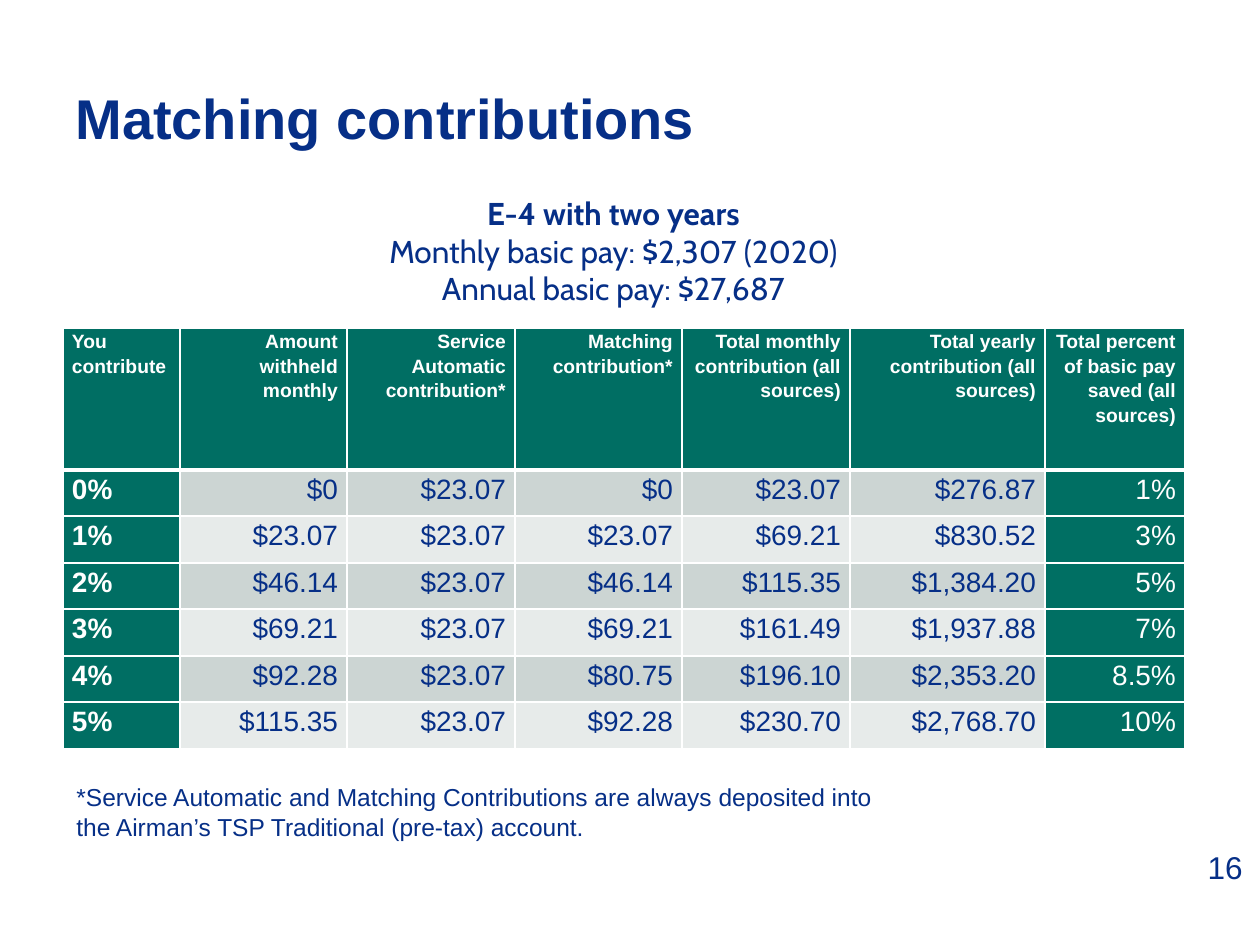
import pptx
import pptx.util
import pptx.dml.color
import pptx.enum.text
from lxml import etree

PX = 914400 / 126
NAVY, GREEN, WHITE = "062F87", "006E63", "FFFFFF"
PERCENT_GREEN = "006F63"
BANDS = ["CCD5D3", "E7EBEA"]
LEFT, CENTER, RIGHT = (pptx.enum.text.PP_ALIGN.LEFT, pptx.enum.text.PP_ALIGN.CENTER,
                       pptx.enum.text.PP_ALIGN.RIGHT)
TOP, MIDDLE = pptx.enum.text.MSO_ANCHOR.TOP, pptx.enum.text.MSO_ANCHOR.MIDDLE
A = "http://schemas.openxmlformats.org/drawingml/2006/main"


def px(*lengths):
    """Turn pixels into EMU."""
    return [pptx.util.Emu(round(n * PX)) for n in lengths]


def style(p, size, color, bold=False, align=LEFT, name="Arial"):
    p.alignment = align
    p.font.name = name
    p.font.size = pptx.util.Pt(size)
    p.font.bold = bold
    p.font.color.rgb = pptx.dml.color.RGBColor.from_string(color)


prs = pptx.Presentation()
prs.slide_width, prs.slide_height = px(1260, 945)
s = prs.slides.add_slide(prs.slide_layouts[6])

# Text boxes: place, lines with bold flag, size, alignment, anchor, font, wrap
texts = [
    ((961, 842, 294, 50), [("16", False)], 18, RIGHT, TOP, "Arial", True),
    ((63, 38, 1134, 158), [("Matching contributions", True)], 32, LEFT, MIDDLE, "Arial", True),
    ((373, 187, 481, 127),
     [("E-4 with two years", True), ("Monthly basic pay: $2,307 (2020)", False),
      ("Annual basic pay: $27,687", False)], 18, CENTER, MIDDLE, "Cabin", False),
    ((64, 776, 859, 72),
     [("*Service Automatic and Matching Contributions are always deposited into "
       "the Airman’s TSP Traditional (pre-tax) account.", False)], 14, LEFT, TOP, "Arial", True),
]
for place, lines, size, align, anchor, name, wrap in texts:
    tf = s.shapes.add_textbox(*px(*place)).text_frame
    tf.word_wrap = wrap
    tf.vertical_anchor = anchor
    tf.text = "\n".join(line for line, _ in lines)
    for p, (_, bold) in zip(tf.paragraphs, lines):
        style(p, size, NAVY, bold, align, name)

# Contribution table
rows = [
    ["You\vcontribute", "Amount withheld monthly", "Service Automatic contribution*",
     "Matching contribution*", "Total monthly contribution (all sources)",
     "Total yearly contribution (all sources)", "Total percent of basic pay saved (all sources)"],
    ["0%", "$0", "$23.07", "$0", "$23.07", "$276.87", "1%"],
    ["1%", "$23.07", "$23.07", "$23.07", "$69.21", "$830.52", "3%"],
    ["2%", "$46.14", "$23.07", "$46.14", "$115.35", "$1,384.20", "5%"],
    ["3%", "$69.21", "$23.07", "$69.21", "$161.49", "$1,937.88", "7%"],
    ["4%", "$92.28", "$23.07", "$80.75", "$196.10", "$2,353.20", "8.5%"],
    ["5%", "$115.35", "$23.07", "$92.28", "$230.70", "$2,768.70", "10%"],
]
widths = [117, 167, 168, 167, 168, 195, 140]
heights = [142] + [46, 47] * 3
last = len(widths) - 1
table = s.shapes.add_table(len(rows), len(widths),
                           *px(63, 328, sum(widths), sum(heights))).table
for column, width in zip(table.columns, px(*widths)):
    column.width = width
for row, height in zip(table.rows, px(*heights)):
    row.height = height

for i, row in enumerate(rows):
    for j, text in enumerate(row):
        cell = table.cell(i, j)
        header = i == 0
        if header or j == 0:
            fill, color = GREEN, WHITE
        elif j == last:
            fill, color = PERCENT_GREEN, WHITE
        else:
            fill, color = BANDS[(i - 1) % 2], NAVY

        cell.margin_left, cell.margin_right, cell.margin_top, cell.margin_bottom = px(9, 9, 0, 0)
        cell.text = text
        p = cell.text_frame.paragraphs[0]
        p.line_spacing = 1.15
        p.space_after = pptx.util.Pt(6)
        style(p, 11 if header else 16, color, header or j == 0, RIGHT if j else LEFT)

        # A thick rule parts the header from the body
        thick = {0: "lnB", 1: "lnT"}.get(i)
        for side in ("lnL", "lnR", "lnT", "lnB"):
            width = pptx.util.Pt(3 if side == thick else 1)
            ln = etree.SubElement(cell._tc.get_or_add_tcPr(), f"{{{A}}}{side}", w=str(width))
            line_fill = etree.SubElement(ln, f"{{{A}}}solidFill")
            etree.SubElement(line_fill, f"{{{A}}}srgbClr", val=WHITE)
        cell.fill.solid()
        cell.fill.fore_color.rgb = pptx.dml.color.RGBColor.from_string(fill)

prs.save("out.pptx")
